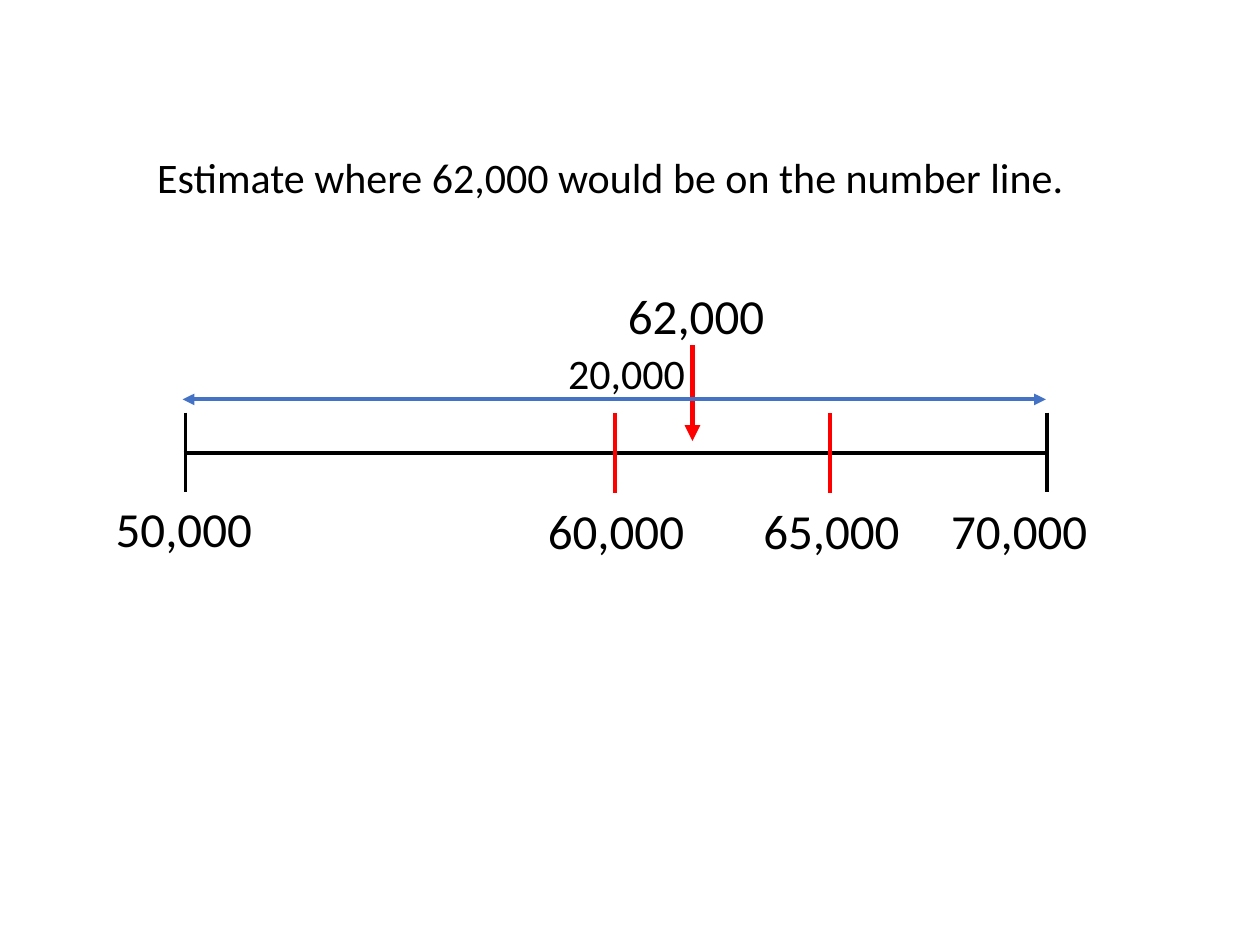
import collections

import lxml.etree
import pptx
import pptx.dml.color
import pptx.enum.shapes
import pptx.enum.text
import pptx.oxml.ns
import pptx.util

COLORS = {"ink": "000000", "mark": "FF0000", "span": "4472C4"}
FONT = "Calibri"
COLUMNS, ROWS = 100, 75
SLIDE_WIDTH, SLIDE_HEIGHT = pptx.util.Inches(10), pptx.util.Inches(7.5)

# Box measures are columns and rows of the slide grid.
Box = collections.namedtuple("Box", "left top width height")
LABEL_WIDTH, LABEL_HEIGHT = 13.1, 5.7


def across(columns):
    return round(SLIDE_WIDTH * columns / COLUMNS)


def down(rows):
    return round(SLIDE_HEIGHT * rows / ROWS)


def emu(box):
    return across(box.left), down(box.top), across(box.width), down(box.height)


def rgb(name):
    return pptx.dml.color.RGBColor.from_string(COLORS[name])


def add_element(parent, tag, **attributes):
    return lxml.etree.SubElement(parent, pptx.oxml.ns.qn(tag), **attributes)


def add_label(slide, box, text, size=28, alignment=pptx.enum.text.PP_ALIGN.LEFT):
    frame = slide.shapes.add_textbox(*emu(box)).text_frame
    frame.word_wrap = True
    paragraph = frame.paragraphs[0]
    paragraph.alignment = alignment
    run = paragraph.add_run()
    run.text = text
    for name, value in {"name": FONT, "size": pptx.util.Pt(size)}.items():
        setattr(run.font, name, value)
    run.font.color.rgb = rgb("ink")


def add_line(slide, start, end, color, width=2.25, arrows=()):
    """Draw a line; arrows names the ends that carry a triangle."""
    connector = slide.shapes.add_connector(
        pptx.enum.shapes.MSO_CONNECTOR.STRAIGHT,
        across(start[0]), down(start[1]), across(end[0]), down(end[1]))
    connector.line.color.rgb = rgb(color)
    connector.line.width = pptx.util.Pt(width)
    line = connector.line._get_or_add_ln()
    for arrow in arrows:
        add_element(line, f"a:{arrow}", type="triangle")
    add_element(connector._element.spPr, "a:effectLst")


def set_borders(cell, sides, width=2.25):
    """Border the given sides, listed in the order L, R, T, B."""
    properties = cell._tc.get_or_add_tcPr()
    for position, side in enumerate(sides):
        border = add_element(properties, f"a:ln{side}",
                             w=str(pptx.util.Pt(width)))
        fill = add_element(border, "a:solidFill")
        add_element(fill, "a:srgbClr", val=COLORS["ink"])
        properties.insert(position, border)


def add_axis(slide, box):
    """Two stacked cells whose borders form the line and its end ticks."""
    table = slide.shapes.add_table(2, 1, *emu(box)).table
    table.first_row = table.horz_banding = False
    for row, sides in enumerate(("LRB", "LRT")):
        cell = table.cell(row, 0)
        for margin in ("left", "right", "top", "bottom"):
            setattr(cell, f"margin_{margin}", 0)
        cell.fill.background()
        set_borders(cell, sides)


def add_number_line(slide, box):
    bottom = box.top + box.height

    def at(share):
        return box.left + share * box.width

    def add_value(text, share, offset, top):
        label = Box(at(share) - offset, top, LABEL_WIDTH, LABEL_HEIGHT)
        add_label(slide, label, text)

    add_axis(slide, box)
    add_value("50,000", 0, 6.5, bottom)
    add_value("70,000", 1, 8.6, bottom + 0.1)
    for text, share in (("60,000", 0.5), ("65,000", 0.75)):
        x = at(share) - 0.1
        add_line(slide, (x, box.top), (x, bottom), "mark")
        add_value(text, share, 6.4, bottom + 0.1)

    estimate = 0.59
    x = at(estimate) - 0.1
    add_line(slide, (x, box.top - 5.4), (x, box.top + 2.2), "mark", 3, ["tailEnd"])
    add_value("62,000", estimate, 6.2, box.top - 10.6)

    y = box.top - 1.1
    add_line(slide, (at(0) - 0.2, y), (at(1) - 0.1, y), "span",
             arrows=["headEnd", "tailEnd"])
    add_label(slide, Box(at(0.43), box.top - 5.7, 12.5, 5), "20,000", 24)


def main():
    presentation = pptx.Presentation()
    presentation.slide_width = SLIDE_WIDTH
    presentation.slide_height = SLIDE_HEIGHT
    slide = presentation.slides.add_slide(presentation.slide_layouts[6])
    add_label(slide, Box(7.3, 11.5, 82.3, 5),
              "Estimate where 62,000 would be on the number line.",
              24, pptx.enum.text.PP_ALIGN.CENTER)
    add_number_line(slide, Box(14.7, 32.8, 68.4, 6.3))
    presentation.save("out.pptx")


if __name__ == "__main__":
    main()
